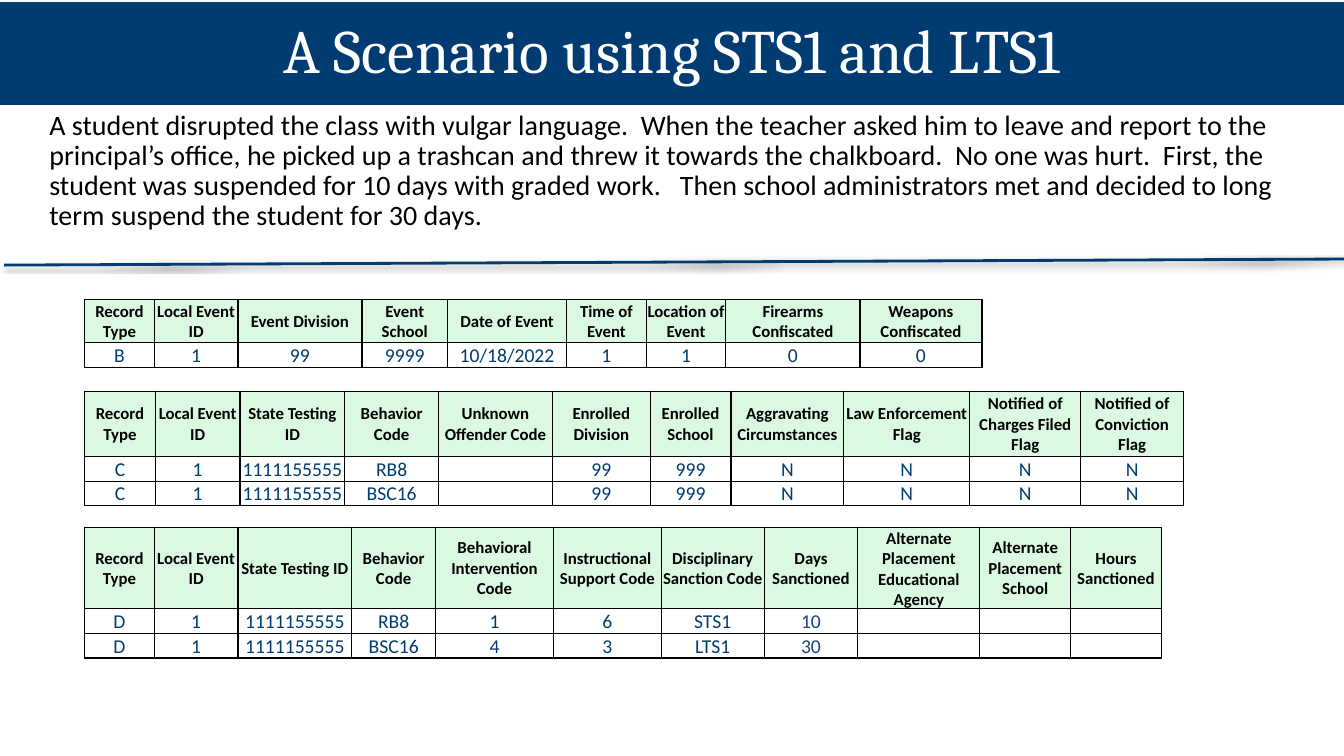
"""Build the slide showing a discipline scenario with three record tables."""
from dataclasses import dataclass
from typing import Any

from pptx import Presentation
from pptx.dml.color import RGBColor
from pptx.enum.shapes import MSO_CONNECTOR, MSO_SHAPE
from pptx.enum.text import MSO_ANCHOR, PP_ALIGN
from pptx.oxml import parse_xml
from pptx.oxml.ns import nsdecls
from pptx.util import Inches, Pt

STRAIGHT = MSO_CONNECTOR.STRAIGHT
RECTANGLE = MSO_SHAPE.RECTANGLE
TOP, MIDDLE, BOTTOM = MSO_ANCHOR.TOP, MSO_ANCHOR.MIDDLE, MSO_ANCHOR.BOTTOM
LEFT, CENTER = PP_ALIGN.LEFT, PP_ALIGN.CENTER

COLORS = {
    "navy": "003C71",
    "blue": "1A4480",
    "mint": "DAF9E0",
    "white": "FFFFFF",
    "black": "000000",
}
TITLE_FORMAT = {"name": "Cambria", "size": Pt(44)}
STORY_FORMAT = {"name": "Calibri", "size": Pt(20)}
HEADER_FORMAT = {"name": "Calibri", "size": Pt(12), "bold": True}
VALUE_FORMAT = {"name": "Calibri", "size": Pt(14), "bold": False}
FRAME_FORMAT = {
    "word_wrap": True,
    "margin_left": Inches(0.13),
    "margin_right": Inches(0.13),
    "margin_top": Inches(0.07),
    "margin_bottom": Inches(0.07),
}
CELL_FORMAT = {
    "margin_left": Inches(0.01),
    "margin_right": Inches(0.01),
    "margin_top": Inches(0.01),
    "margin_bottom": 0,
}
TABLE_LEFT = 0.84
VALUE_ROW_HEIGHT = 0.24
STORY = (
    "A student disrupted the class with vulgar language.  When the teacher asked him to leave "
    "and report to the principal’s office, he picked up a trashcan and threw it towards the "
    "chalkboard.  No one was hurt.  First, the student was suspended for 10 days with graded "
    "work.   Then school administrators met and decided to long term suspend the student for "
    "30 days."
)


@dataclass(frozen=True)
class Column:
    """A table column with its heading, width and values."""

    heading: str
    width: float
    values: tuple[str, ...]
    anchor: Any = MIDDLE
    color: str = "navy"


@dataclass(frozen=True)
class RecordTable:
    """A record table with its top edge, heading height and columns."""

    top: float
    heading_height: float
    columns: tuple[Column, ...]


EVENT = RecordTable(2.97, 0.43, (
    Column("Record Type", 0.69, ("B",)),
    Column("Local Event ID", 0.83, ("1",)),
    Column("Event Division", 1.23, ("99",)),
    Column("Event School", 0.85, ("9999",)),
    Column("Date of Event", 1.18, ("10/18/2022",)),
    Column("Time of Event", 0.79, ("1",)),
    Column("Location of Event", 0.79, ("1",)),
    Column("Firearms Confiscated", 1.33, ("0",)),
    Column("Weapons Confiscated", 1.21, ("0",)),
))
OFFENDER = RecordTable(3.88, 0.65, (
    Column("Record Type", 0.7, ("C", "C")),
    Column("Local Event ID", 0.84, ("1", "1")),
    Column("State Testing ID", 1.04, ("1111155555", "1111155555")),
    Column("Behavior Code", 0.93, ("RB8", "BSC16")),
    Column("Unknown Offender Code", 1.13, ("", "")),
    Column("Enrolled Division", 0.97, ("99", "99")),
    Column("Enrolled School", 0.8, ("999", "999")),
    Column("Aggravating Circumstances", 1.12, ("N", "N")),
    Column("Law Enforcement Flag", 1.25, ("N", "N")),
    Column("Notified of Charges Filed Flag", 1.1, ("N", "N")),
    Column("Notified of Conviction Flag", 1.02, ("N", "N")),
))
SANCTION = RecordTable(5.23, 0.81, (
    Column("Record Type", 0.69, ("D", "D")),
    Column("Local Event ID", 0.83, ("1", "1")),
    Column("State Testing ID", 1.13, ("1111155555", "1111155555")),
    Column("Behavior Code", 0.83, ("RB8", "BSC16")),
    Column("Behavioral Intervention Code", 1.17, ("1", "4"), BOTTOM),
    Column("Instructional Support Code", 1.07, ("6", "3"), BOTTOM),
    Column("Disciplinary Sanction Code", 1.02, ("STS1", "LTS1"), BOTTOM),
    Column("Days Sanctioned", 0.93, ("10", "30"), BOTTOM, "blue"),
    Column("Alternate Placement Educational Agency", 1.21, ("", "")),
    Column("Alternate Placement School", 0.9, ("", "")),
    Column("Hours Sanctioned", 0.9, ("", "")),
))


def apply_format(target: Any, values: dict[str, Any]) -> None:
    """Set each format value on the target."""
    for name, value in values.items():
        setattr(target, name, value)


def paint(fill: Any, color: str) -> None:
    """Fill with a solid named colour."""
    fill.solid()
    fill.fore_color.rgb = RGBColor.from_string(COLORS[color])


def write(para: Any, text: str, font: dict[str, Any], color: str, alignment: Any) -> None:
    """Write one formatted span, or size the paragraph if it is empty."""
    para.alignment = alignment
    if not text:
        size = int(font["size"].pt * 100)
        para._p.append(parse_xml(f'<a:endParaRPr {nsdecls("a")} sz="{size}"/>'))
        return
    span = para.add_run()
    span.text = text
    apply_format(span.font, font)
    span.font.color.rgb = RGBColor.from_string(COLORS[color])


def write_box(box: Any, text: str, font: dict[str, Any], color: str,
              alignment: Any, anchor: Any) -> None:
    """Write a paragraph with tight line spacing into a box."""
    frame = box.text_frame
    apply_format(frame, FRAME_FORMAT | {"vertical_anchor": anchor})
    frame.paragraphs[0].line_spacing = 0.9
    write(frame.paragraphs[0], text, font, color, alignment)


def add_borders(cell: Any) -> None:
    """Draw a thin black border on all sides of a cell."""
    properties = cell._tc.get_or_add_tcPr()
    for side in ("lnL", "lnR", "lnT", "lnB"):
        properties.append(parse_xml(
            f'<a:{side} {nsdecls("a")} w="{Pt(1)}"><a:solidFill>'
            f'<a:srgbClr val="{COLORS["black"]}"/></a:solidFill></a:{side}>'))


def add_record_table(page: Any, record: RecordTable) -> None:
    """Add a record table to the page."""
    value_rows = len(record.columns[0].values)
    heights = [record.heading_height] + [VALUE_ROW_HEIGHT] * value_rows
    width = sum(column.width for column in record.columns)
    table = page.shapes.add_table(
        len(heights), len(record.columns), Inches(TABLE_LEFT), Inches(record.top),
        Inches(width), Inches(sum(heights))).table
    apply_format(table, {"first_row": False, "horz_banding": False})
    for row, height in zip(table.rows, heights):
        row.height = Inches(height)
    for column_index, column in enumerate(record.columns):
        table.columns[column_index].width = Inches(column.width)
        for row_index, text in enumerate((column.heading, *column.values)):
            cell = table.cell(row_index, column_index)
            add_borders(cell)
            para = cell.text_frame.paragraphs[0]
            if row_index == 0:
                apply_format(cell, CELL_FORMAT | {"vertical_anchor": MIDDLE})
                paint(cell.fill, "mint")
                write(para, text, HEADER_FORMAT, "black", CENTER)
            else:
                apply_format(cell, CELL_FORMAT | {"vertical_anchor": column.anchor})
                cell.fill.background()
                write(para, text, VALUE_FORMAT, column.color, CENTER)


def add_divider(page: Any) -> None:
    """Add the slanted divider line with its soft shadow."""
    divider = page.shapes.add_connector(
        STRAIGHT, Inches(0.04), Inches(2.63), Inches(13.33), Inches(2.57))
    divider.line.width = Pt(2)
    paint(divider.line.fill, "navy")
    divider._element.spPr.append(parse_xml(
        f'<a:effectLst {nsdecls("a")}><a:outerShdw blurRad="{Pt(3.1)}" dist="{Pt(1.6)}" '
        f'dir="5400000" rotWithShape="0"><a:srgbClr val="{COLORS["black"]}">'
        '<a:alpha val="38000"/></a:srgbClr></a:outerShdw></a:effectLst>'))


def main() -> None:
    """Build and save the deck."""
    deck = Presentation()
    apply_format(deck, {"slide_width": Inches(13.33), "slide_height": Inches(7.5)})
    page = deck.slides.add_slide(deck.slide_layouts[6])
    banner = page.shapes.add_shape(
        RECTANGLE, 0, Inches(0.02), Inches(13.33), Inches(1.02))
    banner.shadow.inherit = False
    paint(banner.fill, "navy")
    banner.line.fill.background()
    write_box(banner, "A Scenario using STS1 and LTS1", TITLE_FORMAT, "white", CENTER, MIDDLE)
    story = page.shapes.add_textbox(Inches(0.36), Inches(1.03), Inches(12.66), Inches(6.17))
    write_box(story, STORY, STORY_FORMAT, "black", LEFT, TOP)
    add_divider(page)
    for record in (EVENT, OFFENDER, SANCTION):
        add_record_table(page, record)
    deck.save("out.pptx")


if __name__ == "__main__":
    main()
